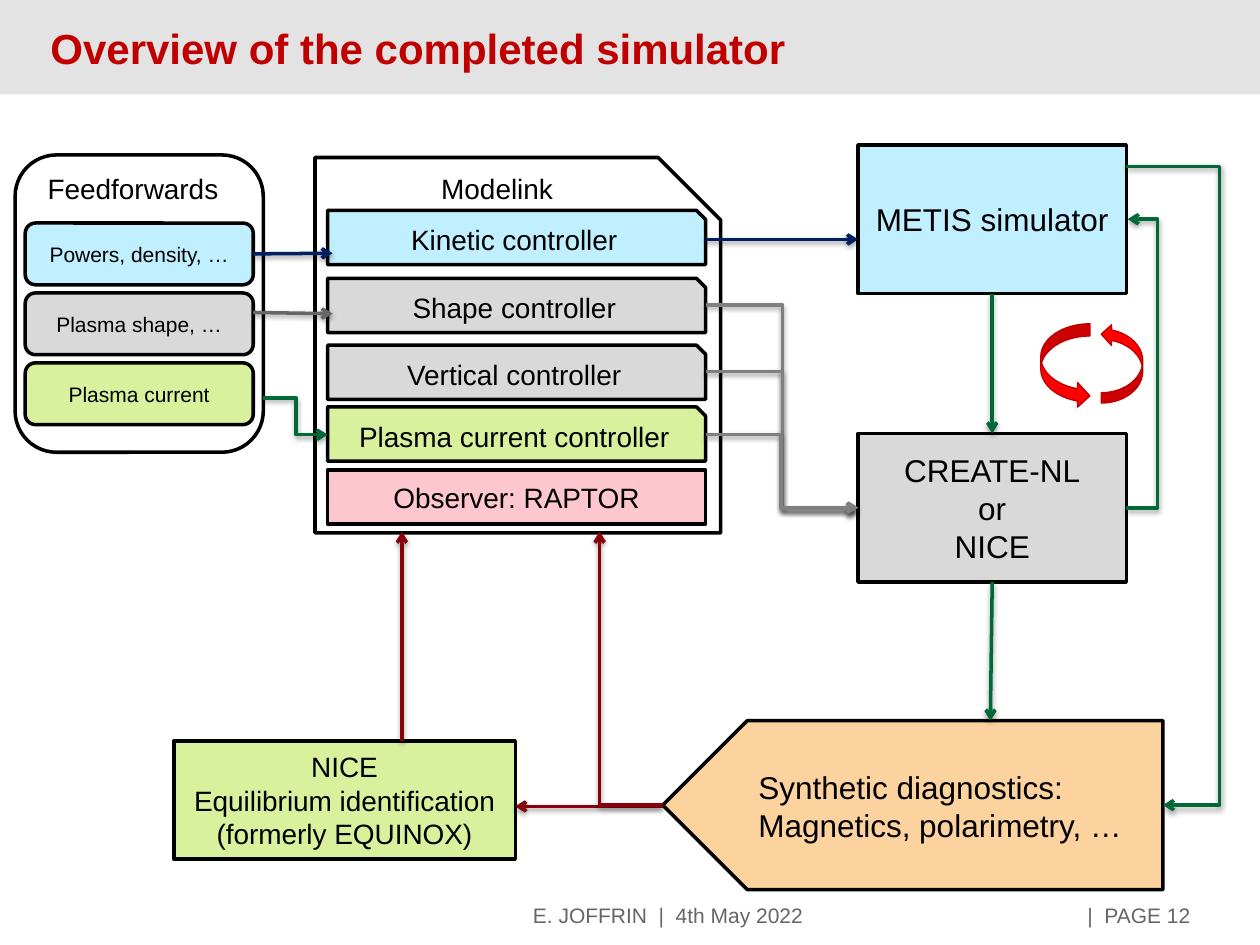
from lxml import etree
from pptx import Presentation
from pptx.dml.color import RGBColor
from pptx.enum import shapes, text
from pptx.oxml.ns import qn
from pptx.util import Inches, Pt

BLACK = RGBColor(0, 0, 0)
BAND = RGBColor(0xE3, 0xE3, 0xE3)
RED = RGBColor(0xC0, 0, 0)
ARROW_RED = RGBColor(0xFF, 0, 0)
BLUE_FILL = RGBColor(0xC0, 0xEF, 0xFF)
GREY_FILL = RGBColor(0xD9, 0xD9, 0xD9)
LIME_FILL = RGBColor(0xD9, 0xF0, 0x9C)
PINK_FILL = RGBColor(0xFE, 0xC7, 0xD0)
ORANGE_FILL = RGBColor(0xFC, 0xD2, 0x9F)
MAROON = RGBColor(0x87, 0, 0x0A)
NAVY = RGBColor(0, 0x20, 0x60)
SLATE = RGBColor(0x66, 0x66, 0x66)
GREY = RGBColor(0x80, 0x80, 0x80)
GREEN = RGBColor(0, 0x69, 0x37)

KIND = shapes.MSO_SHAPE
CENTER, LEFT = text.PP_ALIGN.CENTER, text.PP_ALIGN.LEFT
FONT = "Arial"

TITLE = "Overview of the completed simulator"
FOOTERS = [
    ("E. JOFFRIN  |  4th May 2022", (4.23, 7.06, 4.4, 0.4)),
    ("|  PAGE 12", (8.63, 7.06, 1.31, 0.4)),
]
MODELS = {
    "metis": ("METIS simulator", (6.81, 1.15, 2.13, 1.18), BLUE_FILL, 18),
    "create": ("CREATE-NL\nor\nNICE", (6.81, 3.44, 2.13, 1.18), GREY_FILL, 18),
    "equilibrium": ("NICE\nEquilibrium identification\n(formerly EQUINOX)",
                    (1.38, 5.88, 2.71, 0.94), LIME_FILL, 16),
}
FEEDFORWARDS = [
    ("Powers, density, …", BLUE_FILL),
    ("Plasma shape, …", GREY_FILL),
    ("Plasma current", LIME_FILL),
]
CONTROLLERS = [
    ("Kinetic controller", 1.67, BLUE_FILL, KIND.SNIP_1_RECTANGLE),
    ("Shape controller", 2.21, GREY_FILL, KIND.SNIP_1_RECTANGLE),
    ("Vertical controller", 2.74, GREY_FILL, KIND.SNIP_1_RECTANGLE),
    ("Plasma current controller", 3.23, LIME_FILL, KIND.SNIP_1_RECTANGLE),
    ("Observer: RAPTOR", 3.73, PINK_FILL, KIND.RECTANGLE),
]
LABELS = [
    ("Feedforwards", (0.28, 1.31, 1.73, 0.37), 16, LEFT),
    ("Modelink", (2.75, 1.31, 2.39, 0.37), 16, CENTER),
    ("Synthetic diagnostics:\nMagnetics, polarimetry, …", (5.92, 6.04, 3.31, 0.71), 18, LEFT),
]
STRAIGHT_ARROWS = [
    ((3.19, 5.88), (3.19, 4.22), MAROON, None, None),
    ((5.26, 6.4), (4.09, 6.4), MAROON, None, None),
    ((2.01, 2), (2.64, 2.01), NAVY, ("Powers, density, …", 3), None),
    ((2.01, 2.48), (2.64, 2.49), SLATE, None, None),
    ((5.6, 1.9), (6.81, 1.9), NAVY, None, None),
    ((7.87, 2.33), (7.87, 3.44), GREEN, ("metis", 2), ("create", 0)),
    ((7.86, 4.62), (7.86, 5.72), GREEN, ("create", 2), None),
]
ELBOW_ARROWS = [
    ((5.26, 6.39), (4.76, 4.22), MAROON, None),
    ((2.09, 3.16), (2.6, 3.45), GREEN, 2.35),
    ((5.6, 2.42), (6.81, 4.03), GREY, 6.21),
    ((5.6, 2.95), (6.81, 4.03), GREY, 6.21),
    ((5.6, 3.45), (6.81, 4.03), GREY, 6.2),
    ((8.94, 4.03), (8.95, 1.74), GREEN, 9.19),
    ((8.94, 1.32), (9.23, 6.39), GREEN, 9.68),
]


def write(shape, content, size, color=BLACK, align=CENTER, bold=False, margin=None):
    frame = shape.text_frame
    frame.word_wrap = True
    frame.auto_size = text.MSO_AUTO_SIZE.NONE
    frame.vertical_anchor = text.MSO_ANCHOR.MIDDLE
    if margin is not None:
        frame.margin_left = frame.margin_right = Inches(margin)
        frame.margin_top = frame.margin_bottom = Inches(margin)
    frame.text = content
    for paragraph in frame.paragraphs:
        paragraph.alignment = align
        paragraph.font.name = FONT
        paragraph.font.size = Pt(size)
        paragraph.font.bold = bold
        paragraph.font.color.rgb = color


def add_box(slide, kind, place, fill=None, line=BLACK, width=2, content=None, size=16):
    shape = slide.shapes.add_shape(kind, *map(Inches, place))
    shape.shadow.inherit = False
    if fill is None:
        shape.fill.background()
    else:
        shape.fill.solid()
        shape.fill.fore_color.rgb = fill
    if line is None:
        shape.line.fill.background()
    else:
        shape.line.color.rgb = line
        shape.line.width = Pt(width)
    if content:
        write(shape, content, size)
    return shape


def add_label(slide, content, place, size, align, color=BLACK, margin=None):
    label = slide.shapes.add_textbox(*map(Inches, place))
    write(label, content, size, color, align, margin=margin)


def add_arrow(slide, kind, start, end, color):
    arrow = slide.shapes.add_connector(kind, *map(Inches, start + end))
    arrow.line.color.rgb = color
    arrow.line.width = Pt(2)
    etree.SubElement(arrow.line._get_or_add_ln(), qn("a:tailEnd"), type="arrow")
    effects = etree.SubElement(arrow._element.spPr, qn("a:effectLst"))
    shadow = etree.SubElement(effects, qn("a:outerShdw"), blurRad=str(Pt(3.1)),
                              dist=str(Pt(1.6)), dir="5400000", rotWithShape="0")
    black = etree.SubElement(shadow, qn("a:srgbClr"), val="000000")
    etree.SubElement(black, qn("a:alpha"), val="38000")
    return arrow


def bend(arrow, start, end, turn):
    geometry = arrow._element.spPr.find(qn("a:prstGeom"))
    if turn is None:
        geometry.set("prst", "bentConnector2")
        return
    ratio = round((turn - start[0]) / (end[0] - start[0]) * 100000)
    guides = geometry.find(qn("a:avLst"))
    if guides is None:
        guides = etree.SubElement(geometry, qn("a:avLst"))
    etree.SubElement(guides, qn("a:gd"), name="adj1", fmla=f"val {ratio}")


def main():
    presentation = Presentation()
    presentation.slide_width, presentation.slide_height = Inches(10), Inches(7.5)
    slide = presentation.slides.add_slide(presentation.slide_layouts[5])

    title = slide.shapes.title
    title.left, title.top, title.width, title.height = map(Inches, (0.4, 0.08, 7.36, 0.59))
    write(title, TITLE, 24, RED, LEFT, bold=True, margin=0)
    band = add_box(slide, KIND.RECTANGLE, (0, 0, 10, 0.75), BAND, line=None)
    title._element.addprevious(band._element)
    for content, place in FOOTERS:
        add_label(slide, content, place, 12, LEFT, SLATE, margin=0)

    boxes = {}
    for name, (content, place, fill, size) in MODELS.items():
        boxes[name] = add_box(slide, KIND.RECTANGLE, place, fill, content=content, size=size)

    add_box(slide, KIND.ROUNDED_RECTANGLE, (0.12, 1.23, 1.97, 2.36))
    for row, (content, fill) in enumerate(FEEDFORWARDS):
        place = (0.2, 1.77 + 0.555 * row, 1.81, 0.49)
        boxes[content] = add_box(slide, KIND.ROUNDED_RECTANGLE, place, fill,
                                 content=content, size=12)

    add_box(slide, KIND.SNIP_1_RECTANGLE, (2.5, 1.25, 3.22, 2.98))
    for content, top, fill, kind in CONTROLLERS:
        add_box(slide, kind, (2.6, top, 3, 0.43), fill, content=content)

    diagnostics = add_box(slide, KIND.PENTAGON, (5.26, 5.72, 3.97, 1.34), ORANGE_FILL)
    diagnostics.rotation = 180
    for content, place, size, align in LABELS:
        add_label(slide, content, place, size, align)

    for start, end, color, source, target in STRAIGHT_ARROWS:
        arrow = add_arrow(slide, shapes.MSO_CONNECTOR.STRAIGHT, start, end, color)
        if source:
            arrow.begin_connect(boxes[source[0]], source[1])
        if target:
            arrow.end_connect(boxes[target[0]], target[1])
    for start, end, color, turn in ELBOW_ARROWS:
        arrow = add_arrow(slide, shapes.MSO_CONNECTOR.ELBOW, start, end, color)
        bend(arrow, start, end, turn)

    upward = add_box(slide, KIND.CURVED_LEFT_ARROW, (8.74, 2.57, 0.33, 0.63),
                     ARROW_RED, RED, 0.75)
    upward._element.spPr.find(qn("a:xfrm")).set("flipV", "1")
    add_box(slide, KIND.CURVED_RIGHT_ARROW, (8.26, 2.57, 0.39, 0.67), ARROW_RED, RED, 0.75)

    presentation.save("out.pptx")


if __name__ == "__main__":
    main()
